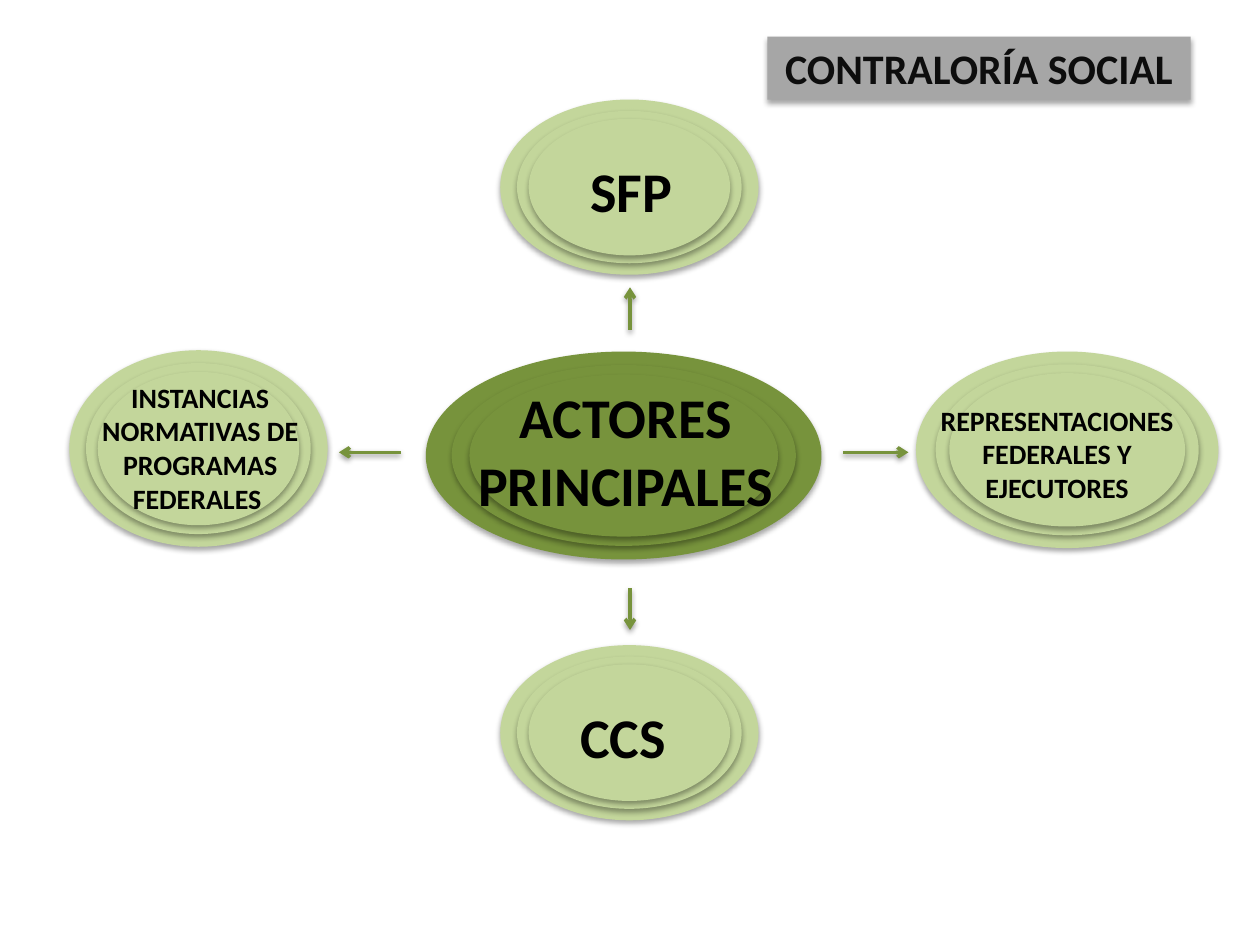
"""Build the slide on the main actors of social oversight."""
from lxml.etree import SubElement
from pptx import Presentation
from pptx.dml.color import RGBColor
from pptx.enum.shapes import MSO_CONNECTOR as LINK, MSO_SHAPE as SHAPE
from pptx.enum.text import MSO_ANCHOR as ANCHOR, PP_ALIGN as ALIGN
from pptx.oxml.ns import qn
from pptx.util import Inches, Pt

BLACK = RGBColor(0x00, 0x00, 0x00)
INK = RGBColor(0x0D, 0x0D, 0x0D)
GRAY = RGBColor(0xA6, 0xA6, 0xA6)
GREEN = RGBColor(0x77, 0x93, 0x3C)
LIGHT = RGBColor(0xC3, 0xD6, 0x9B)

TITLE = "CONTRALORÍA SOCIAL"
TITLE_BOX = (6.09, 0.29, 3.36, 0.5)
RINGS = (1, 0.87, 0.78)
ACTORS = [
    (["ACTORES PRINCIPALES"], 32, GREEN,
     (3.38, 2.79, 3.14, 1.65), (3.67, 2.99, 2.59, 1.18)),
    (["INSTANCIAS", "NORMATIVAS DE PROGRAMAS FEDERALES "], 16, LIGHT,
     (0.55, 2.78, 2.05, 1.56), (0.66, 2.97, 1.86, 1.18)),
    (["SFP"], 32, LIGHT,
     (3.97, 0.79, 2.05, 1.39), (4.14, 1.19, 1.74, 0.64)),
    (["CCS"], 32, LIGHT,
     (3.97, 5.12, 2.05, 1.39), (4.19, 5.53, 1.51, 0.64)),
    (["REPRESENTACIONES FEDERALES Y EJECUTORES"], 16, LIGHT,
     (7.27, 2.79, 2.4, 1.56), (7.21, 3.15, 2.36, 0.91)),
]
ARROWS = [
    (3.18, 3.59, 2.69, 3.59),
    (5, 4.67, 5, 5),
    (6.69, 3.59, 7.21, 3.59),
    (5, 2.62, 5, 2.28),
]


def inches(box):
    return [Inches(n) for n in box]


def add_shadow(shape, gap, alpha):
    effects = SubElement(shape._element.spPr, qn("a:effectLst"))
    shadow = SubElement(effects, qn("a:outerShdw"), blurRad="40000",
                        dist=str(gap), dir="5400000", rotWithShape="0")
    color = SubElement(shadow, qn("a:srgbClr"), val="000000")
    SubElement(color, qn("a:alpha"), val=str(alpha * 1000))


def paint(shape, color):
    shape.fill.solid()
    shape.fill.fore_color.rgb = color
    shape.line.fill.background()
    add_shadow(shape, 23000, 35)


def write(frame, lines, size, color):
    frame.word_wrap = True
    for i, line in enumerate(lines):
        para = frame.paragraphs[0] if i == 0 else frame.add_paragraph()
        para.alignment = ALIGN.CENTER
        run = para.add_run()
        run.text = line
        font = run.font
        font.name, font.size, font.bold = "Calibri", Pt(size), True
        font.color.rgb = color


def add_rings(shapes, box, color):
    left, top, width, height = box
    for scale in RINGS:
        w, h = width * scale, height * scale
        ring = (left + (width - w) / 2, top + (height - h) / 2, w, h)
        paint(shapes.add_shape(SHAPE.OVAL, *inches(ring)), color)


def add_arrow(shapes, ends):
    arrow = shapes.add_connector(LINK.STRAIGHT, *inches(ends))
    arrow.line.color.rgb = GREEN
    arrow.line.width = Pt(2)
    SubElement(arrow.line._get_or_add_ln(), qn("a:tailEnd"), type="arrow")
    add_shadow(arrow, 20000, 38)


def main():
    deck = Presentation()
    deck.slide_width, deck.slide_height = Inches(10), Inches(7.5)
    slide = deck.slides.add_slide(deck.slide_layouts[5])
    shapes = slide.shapes
    title = shapes.title
    title.left, title.top, title.width, title.height = inches(TITLE_BOX)
    paint(title, GRAY)
    write(title.text_frame, [TITLE], 24, INK)
    title.text_frame.vertical_anchor = ANCHOR.MIDDLE
    for lines, size, color, oval, label in ACTORS:
        add_rings(shapes, oval, color)
        write(shapes.add_textbox(*inches(label)).text_frame, lines, size, BLACK)
    for ends in ARROWS:
        add_arrow(shapes, ends)
    deck.save("out.pptx")


if __name__ == "__main__":
    main()
